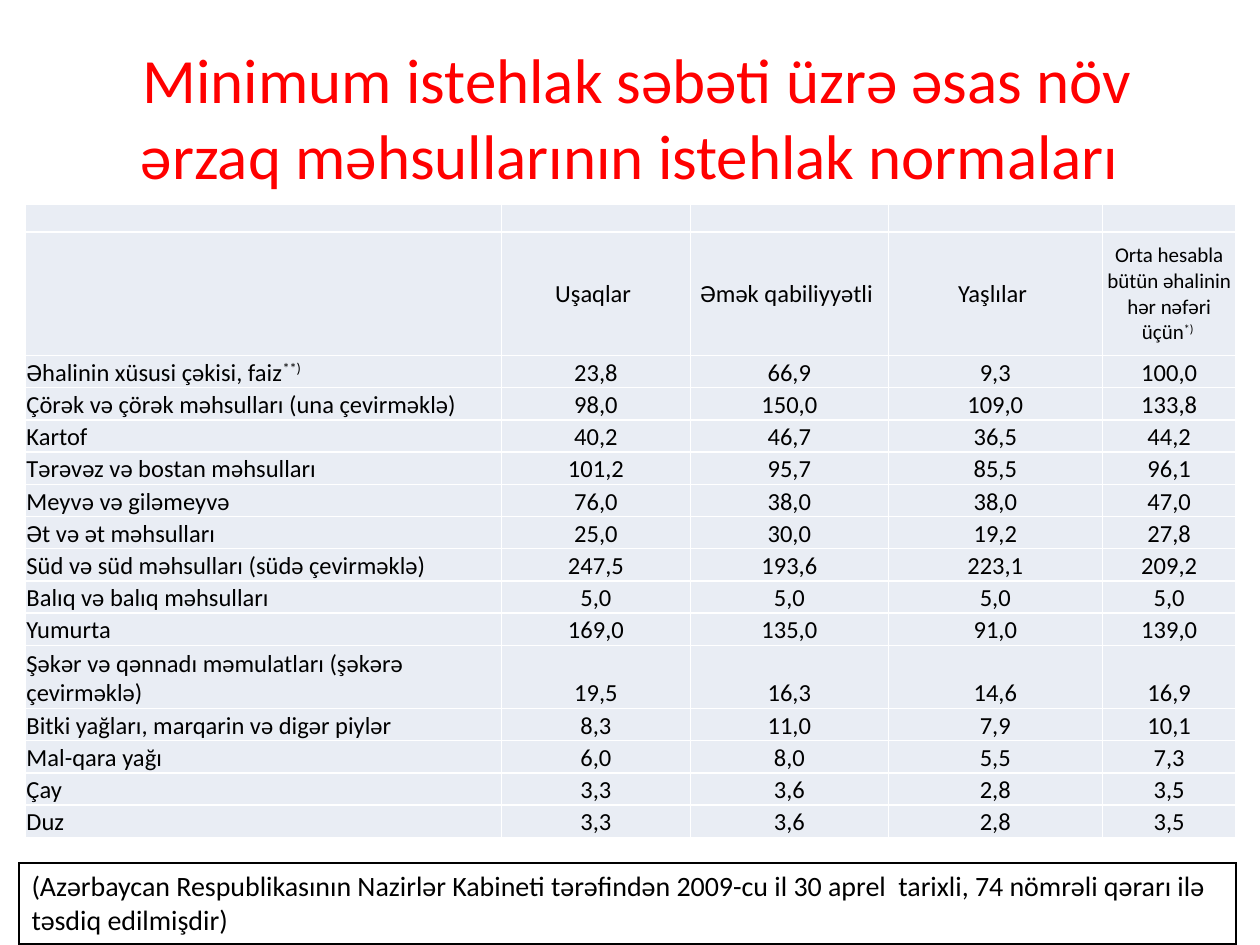
import lxml.etree
import pptx
import pptx.dml.color
import pptx.enum.text
import pptx.oxml.ns
import pptx.util

Inches = pptx.util.Inches
Pt = pptx.util.Pt
RGBColor = pptx.dml.color.RGBColor
PP_ALIGN = pptx.enum.text.PP_ALIGN
ANCHOR = pptx.enum.text.MSO_ANCHOR
qn = pptx.oxml.ns.qn

RED = RGBColor(0xFF, 0x00, 0x00)
BLACK = RGBColor(0x00, 0x00, 0x00)
WHITE = RGBColor(0xFF, 0xFF, 0xFF)
PALE_BLUE = RGBColor(0xE9, 0xED, 0xF4)
FONT = "Calibri"

COLUMN_WIDTHS = [3.78, 1.5, 1.57, 1.7, 1.06]
BLANK_HEIGHT, HEADER_HEIGHT, LINE_HEIGHT, DOUBLE_HEIGHT = 0.22, 0.98, 0.256, 0.5

HEADERS = [
    ("",),
    ("Uşaqlar ",),
    ("Əmək qabiliyyətli ",),
    ("Yaşlılar ",),
    ("Orta hesabla bütün əhalinin hər nəfəri üçün", "*) "),
]
NORMS = [
    (("Əhalinin xüsusi çəkisi, faiz", "**)"), "23,8", "66,9", "9,3", "100,0"),
    (("Çörək və çörək məhsulları (una çevirməklə)",), "98,0", "150,0", "109,0", "133,8"),
    (("Kartof",), "40,2", "46,7", "36,5", "44,2"),
    (("Tərəvəz və bostan məhsulları",), "101,2", "95,7", "85,5", "96,1"),
    (("Meyvə və giləmeyvə",), "76,0", "38,0", "38,0", "47,0"),
    (("Ət və ət məhsulları",), "25,0", "30,0", "19,2", "27,8"),
    (("Süd və süd məhsulları (südə çevirməklə)",), "247,5", "193,6", "223,1", "209,2"),
    (("Balıq və balıq məhsulları",), "5,0", "5,0", "5,0", "5,0"),
    (("Yumurta",), "169,0", "135,0", "91,0", "139,0"),
    (("Şəkər və qənnadı məmulatları (şəkərə çevirməklə)",), "19,5", "16,3", "14,6", "16,9"),
    (("Bitki yağları, marqarin və digər piylər",), "8,3", "11,0", "7,9", "10,1"),
    (("Mal-qara yağı",), "6,0", "8,0", "5,5", "7,3"),
    (("Çay",), "3,3", "3,6", "2,8", "3,5"),
    (("Duz",), "3,3", "3,6", "2,8", "3,5"),
]
DOUBLE_ROW = 9


def set_borders(cell, color):
    tcPr = cell._tc.get_or_add_tcPr()
    for side in ("a:lnL", "a:lnR", "a:lnT", "a:lnB"):
        ln = lxml.etree.SubElement(tcPr, qn(side), w=str(Pt(1)))
        fill = lxml.etree.SubElement(ln, qn("a:solidFill"))
        lxml.etree.SubElement(fill, qn("a:srgbClr"), val=str(color))


def set_text(cell, text, size, align, superscript=""):
    p = cell.text_frame.paragraphs[0]
    p.alignment = align
    p.font.name = FONT
    p.font.size = Pt(size)
    p.font.color.rgb = BLACK
    if not text:
        lxml.etree.SubElement(p._p, qn("a:endParaRPr"), sz=str(size * 100))
        return
    p.add_run().text = text
    if superscript:
        r = p.add_run()
        r.text = superscript
        r._r.get_or_add_rPr().set("baseline", "30000")


def add_plain_table(slide, box, rows, columns):
    table = slide.shapes.add_table(rows, columns, *map(Inches, box)).table
    table.first_row = False
    table.horz_banding = False
    return table


def add_title(slide, box):
    title = slide.shapes.title
    title.left, title.top, title.width, title.height = map(Inches, box)
    tf = title.text_frame
    tf.word_wrap = True
    tf.vertical_anchor = ANCHOR.MIDDLE
    tf.text = " Minimum istehlak səbəti üzrə əsas növ ərzaq məhsullarının istehlak normaları"
    p = tf.paragraphs[0]
    p.alignment = PP_ALIGN.CENTER
    p.font.name = FONT
    p.font.size = Pt(36)
    p.font.color.rgb = RED


def add_norms_table(slide, box):
    heights = [BLANK_HEIGHT, HEADER_HEIGHT] + [LINE_HEIGHT] * len(NORMS)
    heights[2 + DOUBLE_ROW] = DOUBLE_HEIGHT
    table = add_plain_table(slide, box, len(heights), len(COLUMN_WIDTHS))
    for column, width in zip(table.columns, COLUMN_WIDTHS):
        column.width = Inches(width)
    for row, height in zip(table.rows, heights):
        row.height = Inches(height)

    for cell in table.iter_cells():
        set_borders(cell, WHITE)
        cell.fill.solid()
        cell.fill.fore_color.rgb = PALE_BLUE
        cell.margin_left = cell.margin_right = cell.margin_top = Inches(0.01)
        cell.margin_bottom = 0
        cell.vertical_anchor = ANCHOR.BOTTOM

    last = len(HEADERS) - 1
    for c, header in enumerate(HEADERS):
        set_text(table.cell(0, c), "", 12, PP_ALIGN.LEFT)
        cell = table.cell(1, c)
        cell.vertical_anchor = ANCHOR.MIDDLE
        set_text(cell, header[0], 12 if c == last else 14, PP_ALIGN.CENTER, *header[1:])
    for r, (label, *values) in enumerate(NORMS, start=2):
        set_text(table.cell(r, 0), label[0], 14, PP_ALIGN.LEFT, *label[1:])
        for c, value in enumerate(values, start=1):
            set_text(table.cell(r, c), value, 14, PP_ALIGN.CENTER)


def add_note(slide, box):
    cell = add_plain_table(slide, box, 1, 1).cell(0, 0)
    set_borders(cell, BLACK)
    cell.fill.background()
    set_text(
        cell,
        "(Azərbaycan Respublikasının Nazirlər Kabineti tərəfindən 2009-cu il 30 aprel  tarixli, "
        "74 nömrəli qərarı ilə təsdiq edilmişdir)",
        16,
        PP_ALIGN.LEFT,
    )


def main():
    prs = pptx.Presentation()
    prs.slide_width = Inches(10)
    prs.slide_height = Inches(7.5)
    slide = prs.slides.add_slide(prs.slide_layouts[5])
    add_title(slide, (0.5, 0.3, 9, 1.25))
    add_norms_table(slide, (0.2, 1.62, 9.61, 5.03))
    add_note(slide, (0.15, 6.85, 9.66, 0.63))
    prs.save("out.pptx")


if __name__ == "__main__":
    main()
